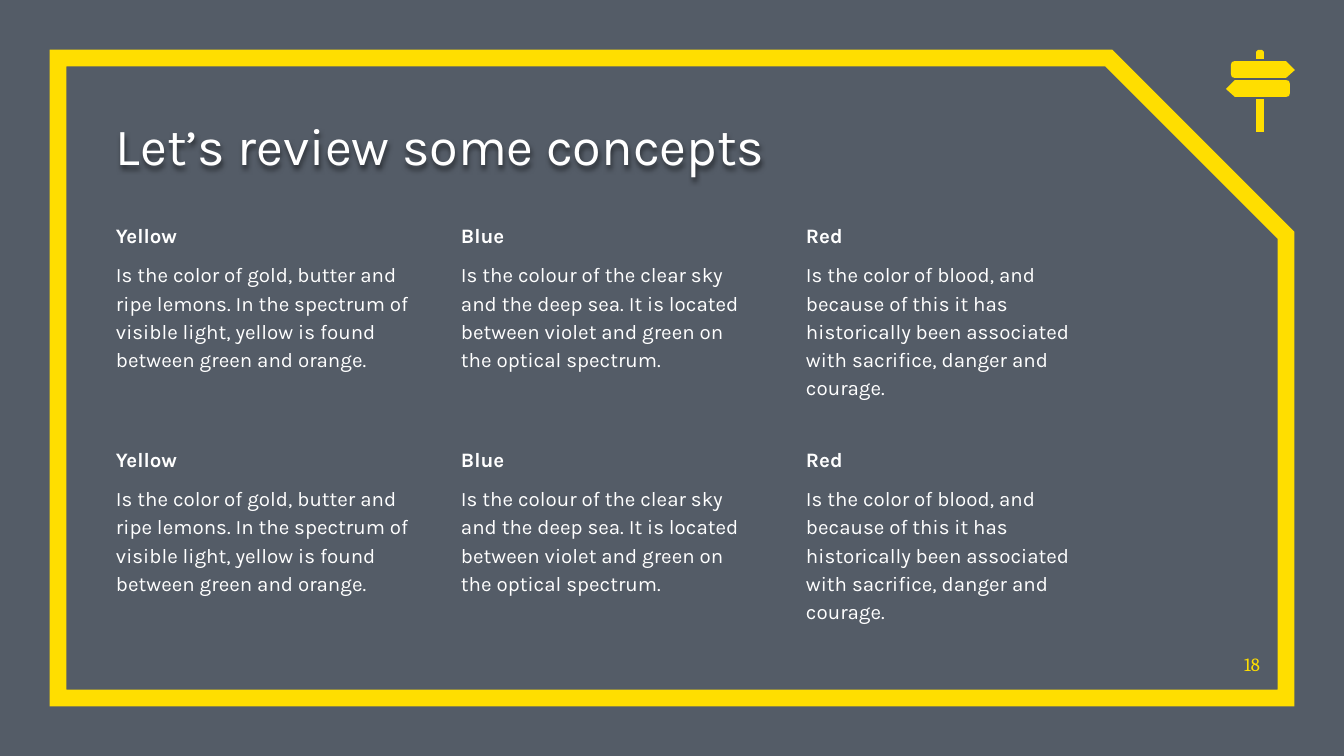
from lxml.etree import SubElement
from pptx import Presentation
from pptx.dml.color import RGBColor
from pptx.enum.shapes import MSO_SHAPE as Preset
from pptx.enum.text import MSO_ANCHOR as Anchor, PP_ALIGN as Align
from pptx.oxml.ns import qn
from pptx.util import Pt

PX = 914400 / 134.4
NAVY = RGBColor(0x04, 0x0F, 0x20)
YELLOW = RGBColor(0xFF, 0xDE, 0x00)
WHITE = RGBColor(0xFF, 0xFF, 0xFF)
BLACK = RGBColor(0x00, 0x00, 0x00)

CONCEPTS = [
    ("Yellow", "Is the color of gold, butter and ripe lemons. In the spectrum of "
               "visible light, yellow is found between green and orange."),
    ("Blue", "Is the colour of the clear sky and the deep sea. It is located "
             "between violet and green on the optical spectrum."),
    ("Red", "Is the color of blood, and because of this it has historically been "
            "associated with sacrifice, danger and courage."),
]
BOARD = [(4, 0), (1, 1), (0, 4), (0, 13), (1, 16), (4, 17), (55, 17), (64, 9), (55, 0)]
CAP = [(2, 0), (0, 2), (0, 9), (8, 9), (8, 2), (6, 0)]
POLE = [(0, 0), (0, 33), (8, 33), (8, 0)]


def emu(*lengths):
    return [round(length * PX) for length in lengths]


class ConceptSlide:
    heading_font = "Karla"
    number_font = "Cambria"

    def __init__(self, deck):
        self.slide = deck.slides.add_slide(deck.slide_layouts[6])
        self.shapes = self.slide.shapes

    def veil(self, box, color, opacity):
        veil = self.shapes.add_shape(Preset.RECTANGLE, *emu(*box))
        veil.shadow.inherit = False
        veil.line.fill.background()
        veil.fill.solid()
        veil.fill.fore_color.rgb = color
        tint = veil.fill._xPr.find(".//" + qn("a:srgbClr"))
        SubElement(tint, qn("a:alpha"), val=str(opacity * 1000))

    def frame(self, box, snip, weight):
        frame = self.shapes.add_shape(Preset.SNIP_1_RECTANGLE, *emu(*box))
        frame.adjustments[0] = snip
        frame.shadow.inherit = False
        frame.fill.background()
        frame.line.color.rgb = YELLOW
        frame.line.width = Pt(weight)
        SubElement(frame.line._get_or_add_ln(), qn("a:miter"), lim="800000")

    def text(self, box, lines, size, font=heading_font, color=WHITE,
             anchor=Anchor.TOP, align=Align.LEFT, bold_first=False, spacing=None):
        holder = self.shapes.add_textbox(*emu(*box))
        frame = holder.text_frame
        frame.word_wrap = True
        frame.vertical_anchor = anchor
        frame.margin_left = frame.margin_right = 0
        frame.margin_top = frame.margin_bottom = 0
        for index, line in enumerate(lines):
            paragraph = frame.add_paragraph() if index else frame.paragraphs[0]
            paragraph.text = line
            paragraph.alignment = align
            paragraph.line_spacing = spacing
            if index:
                paragraph.space_before = Pt(6)
            paragraph.font.name = font
            paragraph.font.size = Pt(size)
            paragraph.font.bold = bold_first and index == 0
            paragraph.font.color.rgb = color
        return holder

    def title(self, box, words):
        title = self.text(box, [words], 28, anchor=Anchor.BOTTOM)
        effects = SubElement(title._element.spPr, qn("a:effectLst"))
        shadow = SubElement(effects, qn("a:outerShdw"), blurRad="38100",
                            dist="19050", dir="5400000", algn="bl", rotWithShape="0")
        shade = SubElement(shadow, qn("a:srgbClr"), val=str(BLACK))
        SubElement(shade, qn("a:alpha"), val="50000")

    def concept(self, box, name, description):
        self.text(box, [name, description], 11, bold_first=True, spacing=1.15)

    def signpost(self, parts):
        post = self.shapes.add_group_shape()
        for left, top, outline in parts:
            points = [(left + x, top + y) for x, y in outline]
            builder = post.shapes.build_freeform(*points[0], scale=PX)
            builder.add_line_segments(points[1:], close=True)
            part = builder.convert_to_shape()
            part.shadow.inherit = False
            part.fill.solid()
            part.fill.fore_color.rgb = YELLOW
            part.line.fill.background()


def main():
    deck = Presentation()
    deck.slide_width, deck.slide_height = emu(1344, 756)
    page = ConceptSlide(deck)
    page.veil((0, 0, 1344, 756), NAVY, 68)
    page.frame((58, 58, 1228, 640), 0.277, 9)
    page.title((116, 105, 988, 71), "Let’s review some concepts")
    for row in range(2):
        for column, (name, description) in enumerate(CONCEPTS):
            box = (116 + 345 * column, 219 + 224 * row, 297, 192)
            page.concept(box, name, description)
    page.text((1224, 637, 36, 38), ["18"], 10, font=page.number_font, color=YELLOW,
              anchor=Anchor.BOTTOM, align=Align.RIGHT)
    mirrored_board = [(64 - x, y) for x, y in BOARD]
    page.signpost([(1231, 61, BOARD), (1226, 80, mirrored_board),
                   (1256, 50, CAP), (1256, 99, POLE)])
    deck.save("out.pptx")


if __name__ == "__main__":
    main()
